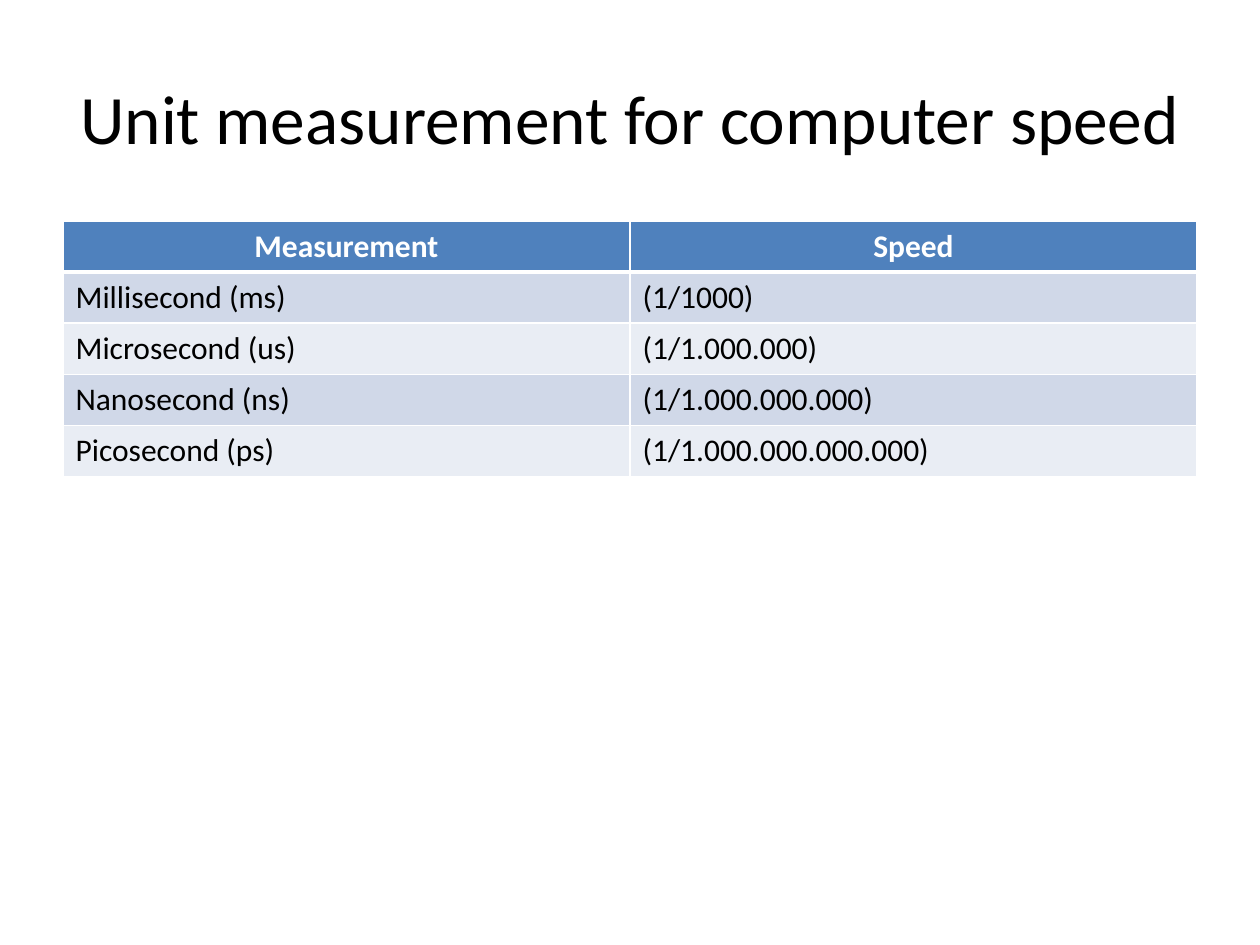
from lxml import etree
from pptx import Presentation
from pptx.dml.color import RGBColor
from pptx.enum.text import MSO_ANCHOR, PP_ALIGN
from pptx.oxml.ns import qn
from pptx.util import Emu, Pt

CENTER, LEFT = PP_ALIGN.CENTER, PP_ALIGN.LEFT
MIDDLE = MSO_ANCHOR.MIDDLE
EMU_PER_PX = 914400 / 126
TITLE_LAYOUT = 5
FONT = "Calibri"
BLACK, WHITE = "000000", "FFFFFF"
HEADER_FILL = "4F81BD"
BAND_FILLS = ["D0D8E8", "E9EDF4"]
ROW_HEIGHT = 51
COLUMN_WIDTH = 567
THIN, THICK = 1, 3
SPEED_UNITS = [
    ("Measurement", "Speed"),
    ("Millisecond (ms)", "(1/1000)"),
    ("Microsecond (us)", "(1/1.000.000)"),
    ("Nanosecond (ns)", "(1/1.000.000.000)"),
    ("Picosecond (ps)", "(1/1.000.000.000.000)"),
]


def px(length):
    """Turn pixels into EMU."""
    return Emu(round(length * EMU_PER_PX))


def color(value):
    """Turn a hex string into a colour."""
    return RGBColor.from_string(value)


def write(frame, text, size, text_color, align, bold=False):
    """Put one formatted paragraph into a text frame."""
    frame.text = text
    paragraph = frame.paragraphs[0]
    paragraph.alignment = align
    font = paragraph.runs[0].font
    font.name, font.size, font.bold = FONT, Pt(size), bold
    font.color.rgb = color(text_color)


def add_title(slide, text):
    """Place and format the slide title."""
    title = slide.shapes.title
    title.left, title.top = px(63), px(38)
    title.width, title.height = px(1134), px(157)
    write(title.text_frame, text, 39.6, BLACK, CENTER)
    title.text_frame.vertical_anchor = MIDDLE


def set_borders(cell, top, bottom):
    """Draw white borders around a cell, with widths in points."""
    properties = cell._tc.get_or_add_tcPr()
    widths = {"a:lnL": THIN, "a:lnR": THIN, "a:lnT": top, "a:lnB": bottom}
    for side, width in widths.items():
        line = etree.SubElement(properties, qn(side), w=str(Pt(width)))
        fill = etree.SubElement(line, qn("a:solidFill"))
        etree.SubElement(fill, qn("a:srgbClr"), val=WHITE)


def style_cell(cell, text, row_index):
    """Fill a cell with its text, borders and band colour."""
    is_header = row_index == 0
    set_borders(
        cell,
        top=THICK if row_index == 1 else THIN,
        bottom=THICK if is_header else THIN,
    )
    band_fill = BAND_FILLS[(row_index - 1) % len(BAND_FILLS)]
    cell.fill.solid()
    cell.fill.fore_color.rgb = color(HEADER_FILL if is_header else band_fill)
    write(
        cell.text_frame,
        text,
        18,
        WHITE if is_header else BLACK,
        CENTER if is_header else LEFT,
        bold=is_header,
    )


def add_speed_table(slide, units):
    """Add the table of time units with a header and banded rows."""
    row_count, column_count = len(units), len(units[0])
    table = slide.shapes.add_table(
        row_count,
        column_count,
        px(63),
        px(221),
        px(column_count * COLUMN_WIDTH),
        px(row_count * ROW_HEIGHT),
    ).table
    for row_index, texts in enumerate(units):
        for column_index, text in enumerate(texts):
            style_cell(table.cell(row_index, column_index), text, row_index)


def main():
    """Build and save the slide."""
    presentation = Presentation()
    presentation.slide_width, presentation.slide_height = px(1260), px(945)
    slide = presentation.slides.add_slide(presentation.slide_layouts[TITLE_LAYOUT])
    add_title(slide, "Unit measurement for computer speed")
    add_speed_table(slide, SPEED_UNITS)
    presentation.save("out.pptx")


if __name__ == "__main__":
    main()
